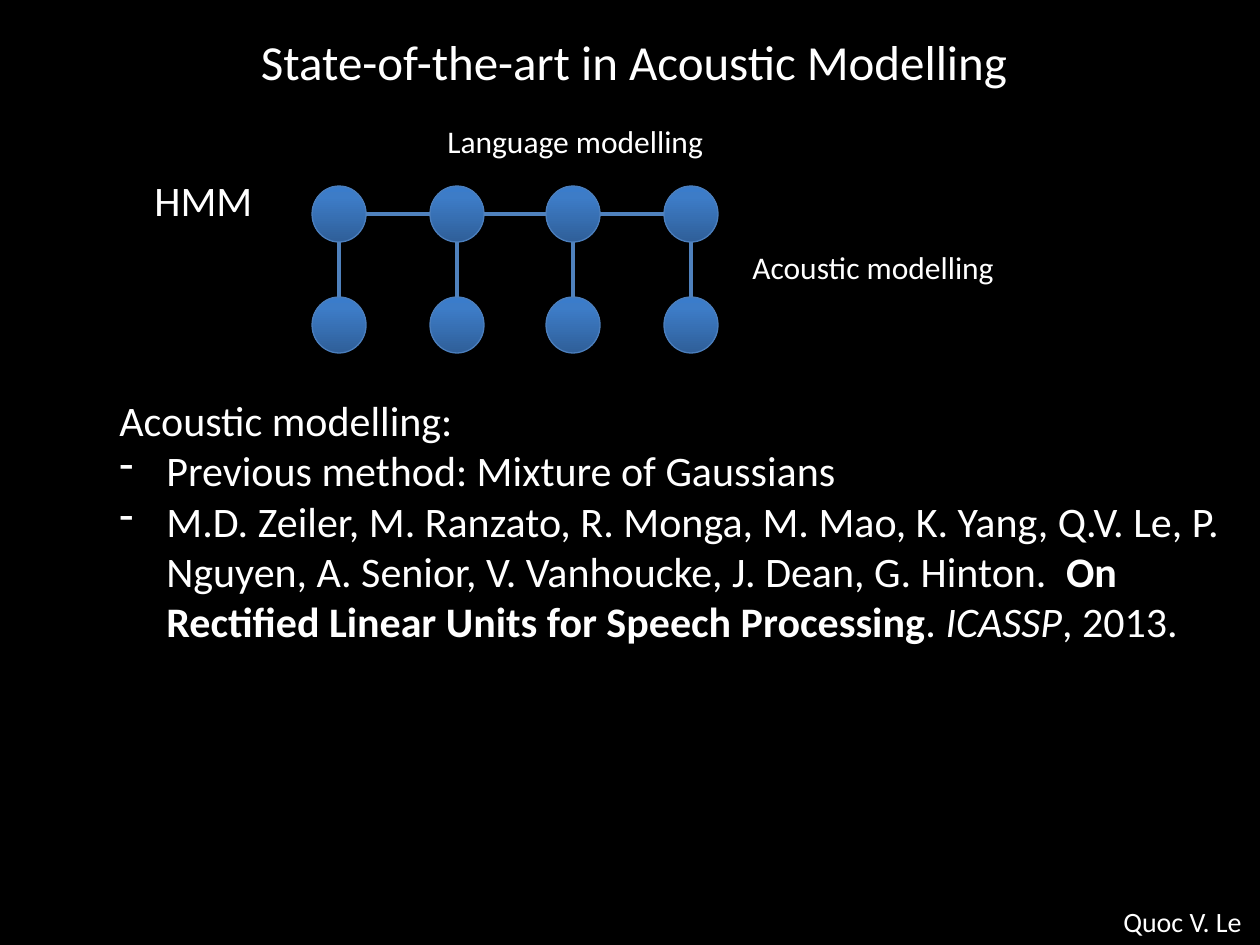
from copy import deepcopy

from lxml import etree
from pptx import Presentation
from pptx.dml.color import RGBColor
from pptx.enum.shapes import MSO_CONNECTOR, MSO_SHAPE
from pptx.enum.text import MSO_AUTO_SIZE, PP_ALIGN
from pptx.oxml.ns import qn
from pptx.util import Pt

PX = 914400 / 126
COLORS = {
    "background": "000000",
    "text": "FFFFFF",
    "link": "4F81BD",
    "outline": "4B7EBC",
    "node_bottom": "2F5F99",
    "node_middle": "3D7CC7",
    "node_top": "3A7CCB",
}


def emu(*lengths):
    return [round(n * PX) for n in lengths]


def add_text(box, paragraphs, size, align=PP_ALIGN.LEFT, wrap=False):
    """Each paragraph is (bulleted, [(text, bold, italic), ...])."""
    tf = slide.shapes.add_textbox(*emu(*box)).text_frame
    tf.word_wrap = wrap
    tf.auto_size = MSO_AUTO_SIZE.SHAPE_TO_FIT_TEXT
    for i, (bulleted, runs) in enumerate(paragraphs):
        p = tf.add_paragraph() if i else tf.paragraphs[0]
        p.alignment = align
        if bulleted:
            indent, = emu(47)
            pPr = p._p.get_or_add_pPr()
            pPr.set("marL", str(indent))
            pPr.set("indent", str(-indent))
            etree.SubElement(pPr, qn("a:buFontTx"))
            etree.SubElement(pPr, qn("a:buChar")).set("char", "-")
        for text, bold, italic in runs:
            r = p.add_run()
            r.text = text
            r.font.name = "Calibri"
            r.font.size = Pt(size)
            r.font.bold = bold
            r.font.italic = italic
            r.font.color.rgb = RGBColor.from_string(COLORS["text"])


prs = Presentation()
prs.slide_width, prs.slide_height = emu(1260, 945)
slide = prs.slides.add_slide(prs.slide_layouts[6])
slide.background.fill.solid()
slide.background.fill.fore_color.rgb = RGBColor.from_string(COLORS["background"])

# Title and body
add_text((242, 25, 784, 72), [(False, [("State-of-the-art in Acoustic Modelling", False, False)])],
         28, align=PP_ALIGN.CENTER)
add_text((107, 388, 1153, 357), [
    (False, [("Acoustic modelling:", False, False)]),
    (True, [("Previous method: Mixture of Gaussians", False, False)]),
    (True, [
        ("M.D. Zeiler, M. Ranzato, R. Monga, M. Mao, K. Yang, Q.V. Le, P. Nguyen, "
         "A. Senior, V. Vanhoucke, J. Dean, G. Hinton.  ", False, False),
        ("On Rectified Linear Units for Speech Processing", True, False),
        (". ", False, False),
        ("ICASSP", False, True),
        (", 2013.", False, False),
    ]),
], 24, wrap=True)

# HMM nodes: hidden states above, observations below
node_w, node_h = 54, 56
columns = [312, 430, 546, 664]
top, bottom = 186, 297
for y in (top, bottom):
    for x in columns:
        sp = slide.shapes.add_shape(MSO_SHAPE.OVAL, *emu(x, y, node_w, node_h))
        sp.shadow.inherit = False
        sp.line.color.rgb = RGBColor.from_string(COLORS["outline"])
        sp.line.width = Pt(0.75)
        sp.fill.gradient()
        sp.fill.gradient_angle = 90
        stops = sp._element.spPr.find(".//" + qn("a:gsLst"))
        stops.append(deepcopy(stops[-1]))
        for stop, position, name in zip(sp.fill.gradient_stops, (0, 0.8, 1),
                                        ("node_bottom", "node_middle", "node_top")):
            stop.position = position
            stop.color.rgb = RGBColor.from_string(COLORS[name])

# Links: along the states, then from each observation to its state
mid = top + node_h // 2
links = [(a + node_w, mid, b, mid) for a, b in zip(columns, columns[1:])]
links += [(x + node_w // 2, bottom, x + node_w // 2, top + node_h) for x in columns]
for ends in links:
    line = slide.shapes.add_connector(MSO_CONNECTOR.STRAIGHT, *emu(*ends))
    line.line.color.rgb = RGBColor.from_string(COLORS["link"])
    line.line.width = Pt(2)
    etree.SubElement(line._element.spPr, qn("a:effectLst"))

# Labels and author
for text, box, size in [
    ("HMM", (142, 168, 125, 63), 24),
    ("Language modelling", (435, 116, 284, 50), 18),
    ("Acoustic modelling", (740, 242, 270, 50), 18),
    ("Quoc V. Le", (1111, 898, 149, 47), 16),
]:
    add_text(box, [(False, [(text, False, False)])], size)

prs.save("out.pptx")
